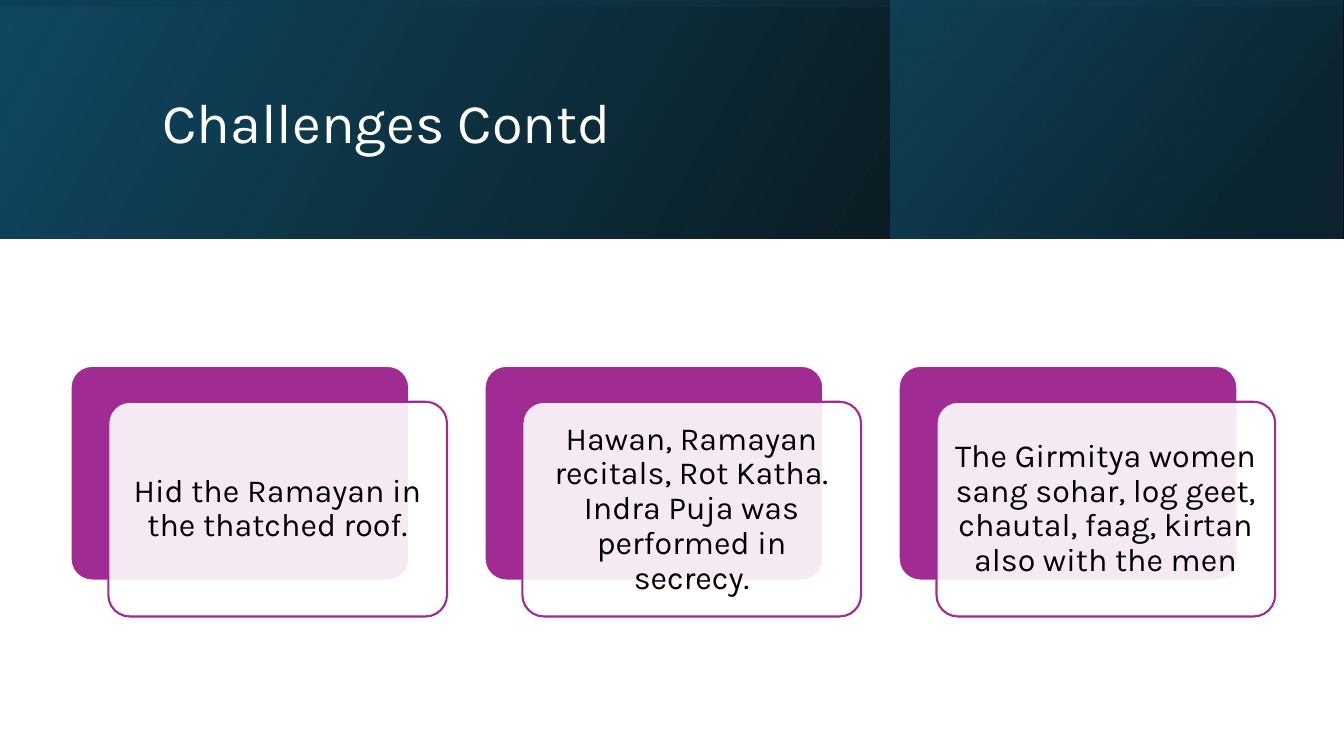
from dataclasses import dataclass

import lxml.etree
import pptx
import pptx.dml.color
import pptx.enum.shapes
import pptx.enum.text
import pptx.oxml
import pptx.oxml.ns
import pptx.shapes.autoshape
import pptx.shapes.group
import pptx.slide
import pptx.text.text
import pptx.util

SLIDE_WIDTH = pptx.util.Inches(13.333)
SLIDE_HEIGHT = pptx.util.Inches(7.5)
FONT = "Karla"
BLACK, WHITE, PURPLE = "000000", "FFFFFF", "A02B93"
CARD_PITCH = 30.81


@dataclass(frozen=True)
class Area:
    """A rectangle in percent of the slide's width and height."""
    left: float
    top: float
    width: float
    height: float

    def shifted(self, across: float, down: float = 0) -> "Area":
        return Area(self.left + across, self.top + down, self.width, self.height)

    def inset(self, across: float, down: float) -> "Area":
        return Area(self.left + across, self.top + down,
                    self.width - 2 * across, self.height - 2 * down)

    def box(self) -> tuple[int, int, int, int]:
        return (round(SLIDE_WIDTH * self.left / 100), round(SLIDE_HEIGHT * self.top / 100),
                round(SLIDE_WIDTH * self.width / 100), round(SLIDE_HEIGHT * self.height / 100))


@dataclass(frozen=True)
class Stop:
    position: int
    color: str
    opacity: int = 100


@dataclass(frozen=True)
class Band:
    area: Area
    angle: int
    stops: tuple[Stop, ...]
    upright: bool = False


HEADER = Area(0, 0, 100, 31.6)
TITLE = Area(11.33, 5.07, 79.73, 22.93)
FIRST_CARD = Area(5.25, 48.4, 25.2, 28.4)
BANDS = (
    Band(HEADER, 330, (Stop(0, BLACK, 96), Stop(100, "104862"))),
    Band(Area(66.3, 0, 33.6, 31.6), 320, (Stop(19, "0B3041", 68), Stop(100, "156082", 48))),
    Band(HEADER, 350, (Stop(23, "104862", 16), Stop(99, BLACK, 45)), upright=True),
)
CARD_TEXTS = (
    "Hid the Ramayan in the thatched roof.",
    "Hawan, Ramayan recitals, Rot Katha. Indra Puja was performed in secrecy.",
    "The Girmitya women sang sohar, log geet, chautal, faag, kirtan also with the men",
)


def rgb(color: str) -> pptx.dml.color.RGBColor:
    return pptx.dml.color.RGBColor.from_string(color)


def add_run(paragraph: pptx.text.text._Paragraph, text: str, size: int, color: str) -> None:
    run = paragraph.add_run()
    run.text = text
    run.font.name = FONT
    run.font.size = pptx.util.Pt(size)
    run.font.color.rgb = rgb(color)


def set_gradient(shape: pptx.shapes.autoshape.Shape, band: Band) -> None:
    """Replace the shape's fill by a linear gradient with translucent stops."""
    stops = "".join(
        f'<a:gs pos="{stop.position * 1000}"><a:srgbClr val="{stop.color}">'
        f'<a:alpha val="{stop.opacity * 1000}"/></a:srgbClr></a:gs>'
        for stop in band.stops)
    gradient = pptx.oxml.parse_xml(
        f'<a:gradFill {pptx.oxml.ns.nsdecls("a")} rotWithShape="1"><a:gsLst>{stops}</a:gsLst>'
        f'<a:lin ang="{band.angle * 60000}" scaled="0"/></a:gradFill>')
    shape.fill.solid()
    properties = shape.element.spPr
    properties.replace(properties.find(pptx.oxml.ns.qn("a:solidFill")), gradient)


def add_band(slide: pptx.slide.Slide, band: Band) -> None:
    left, top, width, height = band.area.box()
    if band.upright:
        left, top = left + (width - height) // 2, top + (height - width) // 2
        width, height = height, width
    shape = slide.shapes.add_shape(
        pptx.enum.shapes.MSO_SHAPE.RECTANGLE, left, top, width, height)
    shape.shadow.inherit = False
    shape.line.fill.background()
    set_gradient(shape, band)
    shape.rotation = 270 if band.upright else 0
    shape.element.spPr.find(pptx.oxml.ns.qn("a:xfrm")).set("flipH", "1")


def add_panel(group: pptx.shapes.group.GroupShape, area: Area, fill: str, line: str,
              opacity: int = 100) -> None:
    panel = group.shapes.add_shape(
        pptx.enum.shapes.MSO_SHAPE.ROUNDED_RECTANGLE, *area.box())
    panel.adjustments[0] = 0.1
    panel.shadow.inherit = False
    panel.fill.solid()
    panel.fill.fore_color.rgb = rgb(fill)
    panel.line.color.rgb = rgb(line)
    panel.line.width = pptx.util.Pt(1.5)
    if opacity < 100:
        color = panel.element.spPr.find(pptx.oxml.ns.qn("a:solidFill"))[0]
        lxml.etree.SubElement(color, pptx.oxml.ns.qn("a:alpha"), val=str(opacity * 1000))


def add_card_text(group: pptx.shapes.group.GroupShape, area: Area, text: str) -> None:
    frame = group.shapes.add_textbox(*area.box()).text_frame
    frame.word_wrap = True
    frame.vertical_anchor = pptx.enum.text.MSO_ANCHOR.MIDDLE
    margin = pptx.util.Inches(0.1)
    frame.margin_left = frame.margin_right = frame.margin_top = frame.margin_bottom = margin
    paragraph = frame.paragraphs[0]
    paragraph.alignment = pptx.enum.text.PP_ALIGN.CENTER
    paragraph.line_spacing = 0.9
    space_after = lxml.etree.SubElement(
        paragraph._p.get_or_add_pPr(), pptx.oxml.ns.qn("a:spcAft"))
    lxml.etree.SubElement(space_after, pptx.oxml.ns.qn("a:spcPct"), val="35000")
    add_run(paragraph, text, 23, BLACK)


def add_card(group: pptx.shapes.group.GroupShape, back: Area, text: str) -> None:
    front = back.shifted(2.81, 4.75)
    add_panel(group, back, PURPLE, WHITE)
    add_panel(group, front, WHITE, PURPLE, opacity=90)
    add_card_text(group, front.inset(0.47, 0.83), text)


def format_title(slide: pptx.slide.Slide, text: str) -> None:
    """Place the title and bring it in front of the header bands."""
    title = slide.shapes.title
    title.left, title.top, title.width, title.height = TITLE.box()
    slide.shapes.element.append(title.element)
    frame = title.text_frame
    frame.auto_size = pptx.enum.text.MSO_AUTO_SIZE.NONE
    frame.word_wrap = True
    frame.vertical_anchor = pptx.enum.text.MSO_ANCHOR.MIDDLE
    paragraph = frame.paragraphs[0]
    paragraph.alignment = pptx.enum.text.PP_ALIGN.LEFT
    paragraph.line_spacing = 0.9
    add_run(paragraph, text, 40, WHITE)


def main() -> None:
    presentation = pptx.Presentation()
    presentation.slide_width = SLIDE_WIDTH
    presentation.slide_height = SLIDE_HEIGHT
    slide = presentation.slides.add_slide(presentation.slide_layouts.get_by_name("Title Only"))
    slide.background.fill.solid()
    slide.background.fill.fore_color.rgb = rgb(WHITE)
    for band in BANDS:
        add_band(slide, band)
    format_title(slide, "Challenges Contd")
    cards = slide.shapes.add_group_shape()
    for index, text in enumerate(CARD_TEXTS):
        add_card(cards, FIRST_CARD.shifted(index * CARD_PITCH), text)
    presentation.save("out.pptx")


if __name__ == "__main__":
    main()
